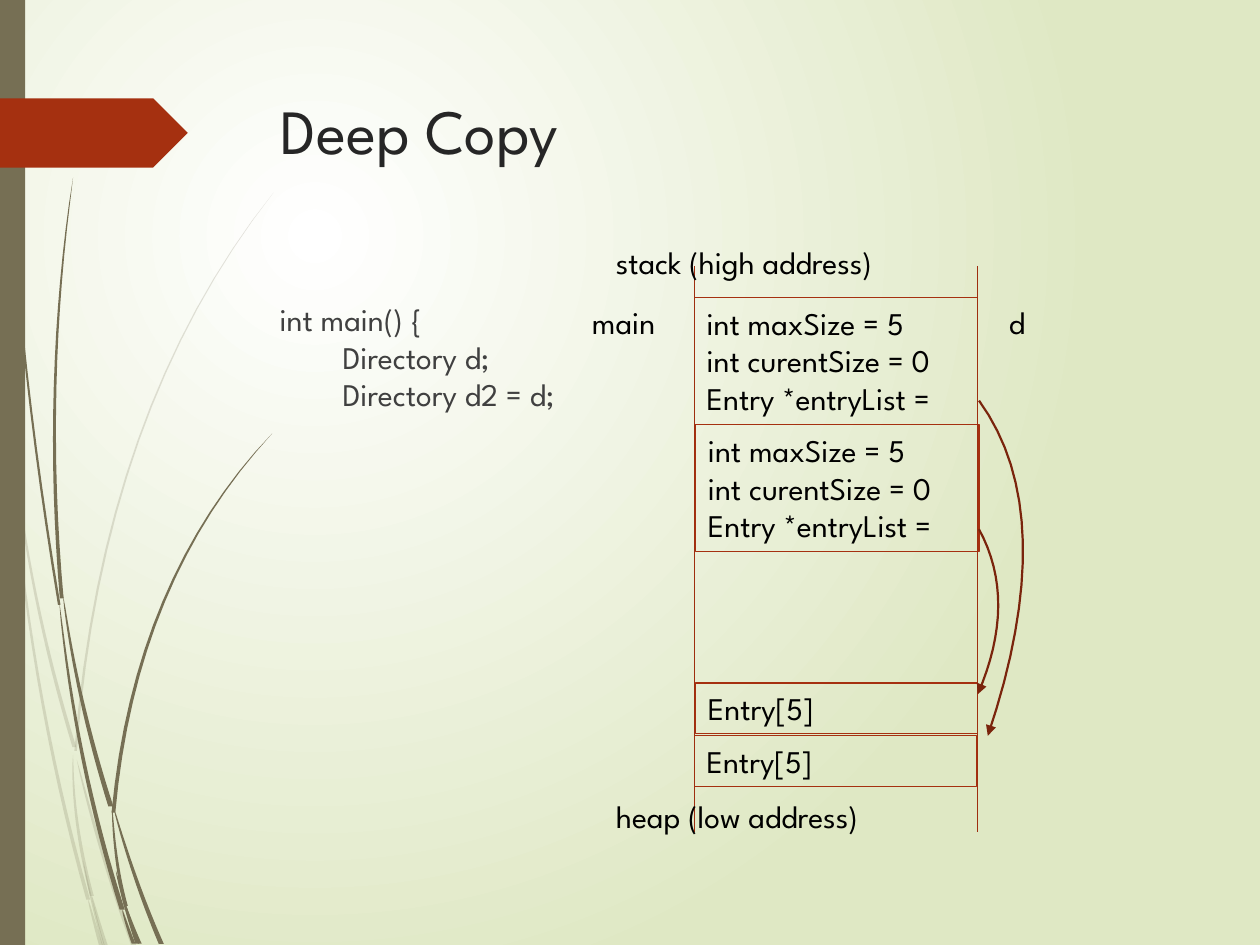
from lxml import etree
from pptx import Presentation
from pptx.dml.color import RGBColor
from pptx.enum.shapes import MSO_CONNECTOR, MSO_SHAPE
from pptx.enum.text import MSO_ANCHOR, MSO_AUTO_SIZE, PP_ALIGN
from pptx.oxml.ns import qn
from pptx.util import Inches, Pt

RECTANGLE, PENTAGON = MSO_SHAPE.RECTANGLE, MSO_SHAPE.PENTAGON
STRAIGHT = MSO_CONNECTOR.STRAIGHT
TOP, LEFT = MSO_ANCHOR.TOP, PP_ALIGN.LEFT
GROW, FIXED = MSO_AUTO_SIZE.SHAPE_TO_FIT_TEXT, MSO_AUTO_SIZE.NONE
color = RGBColor.from_string
FONT, OLIVE, RUST, WALL, ARROW = "League Spartan", "766F54", "A53010", "9E2E0F", "7A240C"
CURVE_STEPS = 16

# Start, bend and end of each strand, then its width at the end
PALE_STRANDS = [
    ((0, 2.9), (0.05, 3.2), (0.08, 3.5), 0.02),
    ((0.1, 3.5), (0.22, 4.72), (0.59, 5.93), 0.03),
    ((0.61, 6.03), (0.8, 6.8), (1.06, 7.5), 0.04),
    ((0.73, 7.11), (0.78, 7.31), (0.84, 7.5), 0.03),
    ((0.08, 3.5), (0.21, 5.4), (0.7, 7.14), 0.03),
    ((0.58, 5.99), (0.57, 6.5), (0.73, 7.11), 0.03),
    ((2.17, 1.53), (0.81, 3.25), (0.6, 5.96), 0.02),
    ((0.7, 7.14), (0.75, 7.33), (0.8, 7.5), 0.03),
    ((0.66, 6.83), (0.73, 7.18), (0.82, 7.5), 0.02),
]
DARK_STRANDS = [
    ((0.03, 0), (0.05, 2.3), (0.47, 4.8), 0.02),
    ((0.5, 4.72), (0.61, 5.55), (0.88, 6.4), 0.04),
    ((0.9, 6.4), (1.06, 6.98), (1.28, 7.49), 0.04),
    ((0.47, 4.77), (0.6, 6.05), (0.97, 7.22), 0.04),
    ((0.58, 1.41), (0.34, 3.05), (0.49, 4.75), 0.03),
    ((1, 7.19), (1.05, 7.35), (1.11, 7.49), 0.03),
    ((2.16, 3.44), (1.07, 4.6), (0.9, 6.45), 0.03),
    ((0.97, 7.22), (1.01, 7.36), (1.06, 7.49), 0.03),
    ((0.89, 6.4), (0.91, 6.85), (1, 7.19), 0.03),
    ((0.92, 6.91), (0.99, 7.2), (1.09, 7.49), 0.03),
]
POINTERS = [((7.77, 3.18), (8.43, 4.09), (7.84, 5.84)),
            ((7.77, 4.2), (8.08, 4.77), (7.76, 5.51))]

presentation = Presentation()
presentation.slide_width, presentation.slide_height = Inches(10), Inches(7.5)
slide = presentation.slides.add_slide(presentation.slide_layouts[6])
shapes = slide.shapes


def add_curve(start, bend, end, width=0):
    """Draw an open curve, or a closed strand that widens to the given width."""
    center, edge = [], []
    for step in range(CURVE_STEPS + 1):
        t = step / CURVE_STEPS
        x, y = [(1 - t) ** 2 * a + 2 * t * (1 - t) * b + t * t * c
                for a, b, c in zip(start, bend, end)]
        half = width * t ** 0.5 / 2
        center.append((Inches(x - half), Inches(y)))
        edge.append((Inches(x + half), Inches(y)))
    outline = center + edge[::-1] if width else center
    builder = shapes.build_freeform(*outline[0], scale=1.0)
    builder.add_line_segments(outline[1:], close=width > 0)
    shape = builder.convert_to_shape()
    shape.shadow.inherit = False
    return shape


def write_text(shape, lines, size=18, text_color="000000", wrap=True, auto_size=GROW):
    frame = shape.text_frame
    frame_format = {"word_wrap": wrap, "auto_size": auto_size, "vertical_anchor": TOP}
    for name, value in frame_format.items():
        setattr(frame, name, value)
    frame.text = "\n".join(lines)
    for paragraph in frame.paragraphs:
        paragraph.alignment = LEFT
        for name, value in {"name": FONT, "size": Pt(size)}.items():
            setattr(paragraph.font, name, value)
        paragraph.font.color.rgb = color(text_color)


# Background glow, centred a quarter of the way in
background = slide.background.fill
background.gradient()
for stop, stop_color in zip(background.gradient_stops, ("FFFFFF", "DFE8C4")):
    stop.color.rgb = color(stop_color)
gradient = slide.element.find(".//" + qn("a:gradFill"))
gradient.remove(gradient.find(qn("a:lin")))
glow = etree.SubElement(gradient, qn("a:path"), path="circle")
etree.SubElement(glow, qn("a:fillToRect"), l="50000", t="50000", r="100000", b="100000")

# Left decoration
for strands, opacity in ((PALE_STRANDS, 20), (DARK_STRANDS, 100)):
    for strand in strands:
        shape = add_curve(*strand)
        shape.fill.solid()
        shape.fill.fore_color.rgb = color(OLIVE)
        shape.line.fill.background()
        fill_color = shape.element.spPr.find(qn("a:solidFill")).find(qn("a:srgbClr"))
        etree.SubElement(fill_color, qn("a:alpha"), val=str(opacity * 1000))
for kind, top, width, height, fill in ((RECTANGLE, 0, 0.2, 7.5, OLIVE),
                                       (PENTAGON, 0.78, 1.49, 0.55, RUST)):
    shape = shapes.add_shape(kind, 0, Inches(top), Inches(width), Inches(height))
    shape.shadow.inherit = False
    shape.fill.solid()
    shape.fill.fore_color.rgb = color(fill)
    shape.line.fill.background()

# Title and code
title = shapes.add_textbox(Inches(2.13), Inches(0.68), Inches(7.21), Inches(1.4))
write_text(title, ["Deep Copy"], 36, "262626", auto_size=FIXED)
code = shapes.add_textbox(Inches(2.12), Inches(2.33), Inches(7.21), Inches(4.13))
write_text(code, ["int main() {", "\tDirectory d;", "\tDirectory d2 = d;"],
           text_color="404040", auto_size=FIXED)
for paragraph in code.text_frame.paragraphs:
    tabs = etree.Element(qn("a:tabLst"))
    etree.SubElement(tabs, qn("a:tab"), pos=str(Inches(0.5)), algn="l")
    paragraph._p.get_or_add_pPr().insert(0, tabs)

# Memory diagram
directory = ["int maxSize = 5", "int curentSize = 0", "Entry *entryList ="]
for left, top, width, height, lines in (
        (5.51, 2.36, 2.25, 1.01, directory), (5.51, 5.84, 2.24, 0.4, ["Entry[5]"]),
        (5.52, 3.37, 2.25, 1.01, directory), (5.52, 5.42, 2.24, 0.4, ["Entry[5]"])):
    block = shapes.add_shape(RECTANGLE, Inches(left), Inches(top), Inches(width), Inches(height))
    block.shadow.inherit = False
    block.fill.background()
    block.line.color.rgb = color(RUST)
    block.line.width = Pt(0.75)
    write_text(block, lines)
for x in (5.51, 7.76):
    wall = shapes.add_connector(STRAIGHT, Inches(x), Inches(2.11), Inches(x), Inches(6.6))
    wall.line.color.rgb = color(WALL)
    wall.line.width = Pt(0.75)
    etree.SubElement(wall.element.spPr, qn("a:effectLst"))
for left, top, width, text in (
        (4.79, 1.88, 2.45, "stack (high address)"), (4.6, 2.36, 0.76, "main"),
        (4.79, 6.28, 2.34, "heap (low address)"), (7.91, 2.36, 0.34, "d")):
    label = shapes.add_textbox(Inches(left), Inches(top), Inches(width), Inches(0.4))
    write_text(label, [text], wrap=False)
for pointer in POINTERS:
    arrow = add_curve(*pointer)
    arrow.fill.background()
    arrow.line.color.rgb = color(ARROW)
    arrow.line.width = Pt(1.25)
    line = arrow.element.spPr.find(qn("a:ln"))
    etree.SubElement(line, qn("a:tailEnd"), type="triangle")

presentation.save("out.pptx")
